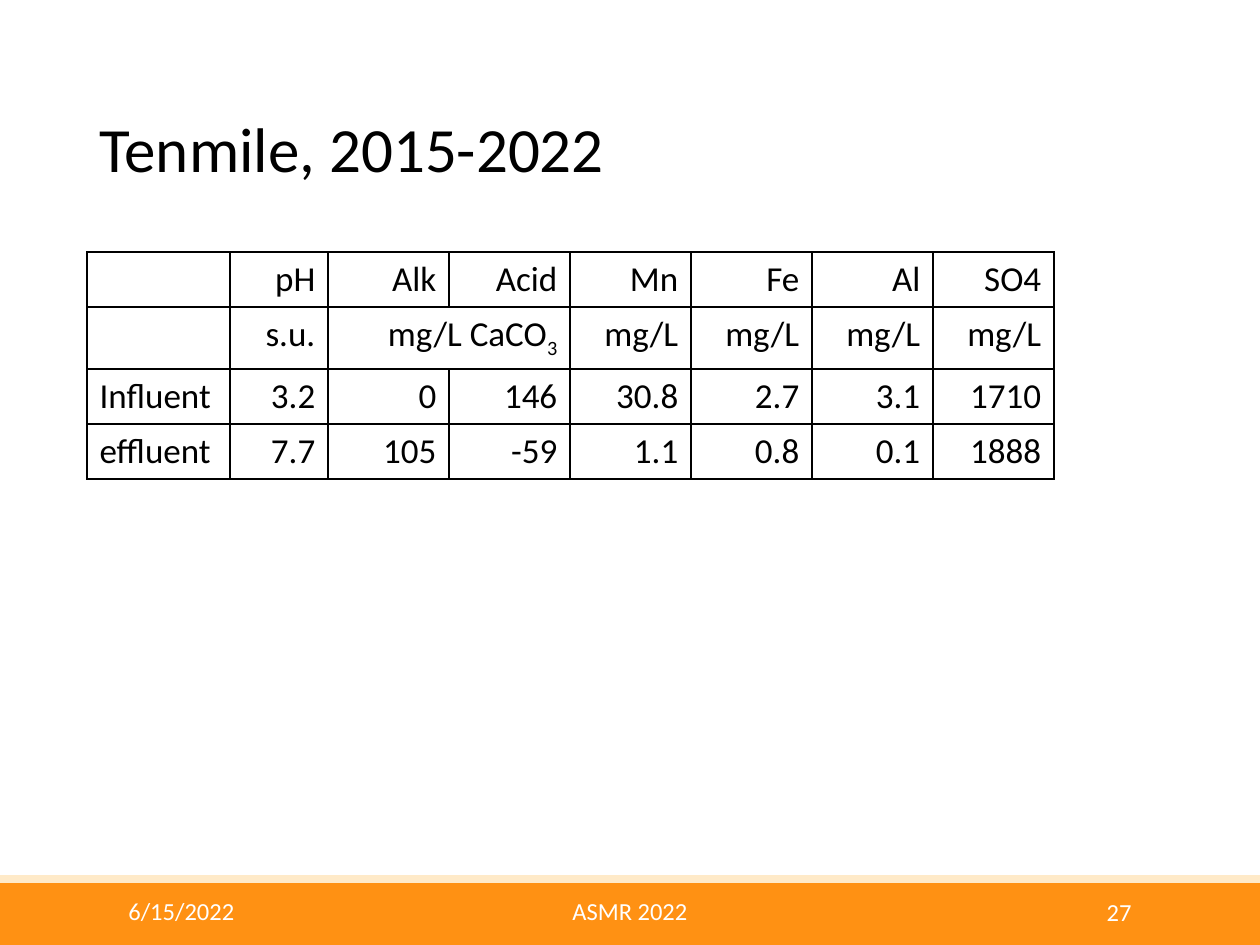
"""Build the Tenmile water quality table slide."""
import pptx
import pptx.util
import pptx.dml.color
import pptx.enum.shapes
import pptx.enum.text
import pptx.oxml
import pptx.oxml.ns

RGB = pptx.dml.color.RGBColor.from_string
ALIGN = pptx.enum.text.PP_ALIGN
ANCHOR = pptx.enum.text.MSO_ANCHOR
THEME = {
    "font": "Calibri", "ink": "000000", "paper": "FFFFFF",
    "band": "FF9113", "strip": "FFEAC8",
    "title": 36, "cell": 20, "foot": 14,
}
SCALE = 914400 / 126


def px(*sizes):
    return [pptx.util.Emu(round(size * SCALE)) for size in sizes]


def style(para, size, color, align):
    para.alignment = align
    form = {"name": THEME["font"], "size": pptx.util.Pt(THEME[size]), "bold": False}
    for run in para.runs:
        for key, value in form.items():
            setattr(run.font, key, value)
        run.font.color.rgb = RGB(THEME[color])


deck = pptx.Presentation()
deck.slide_width, deck.slide_height = px(1260, 945)
slide = deck.slides.add_slide(deck.slide_layouts[5])

for name, top, high in [("band", 883, 62), ("strip", 875, 8)]:
    bar = slide.shapes.add_shape(
        pptx.enum.shapes.MSO_SHAPE.RECTANGLE, *px(0, top, 1260, high))
    bar.shadow.inherit = False
    bar.fill.solid()
    bar.fill.fore_color.rgb = RGB(THEME[name])
    bar.line.fill.background()

feet = [
    ("6/15/2022", 116, 890, 189, ALIGN.LEFT),
    ("ASMR 2022", 441, 890, 378, ALIGN.CENTER),
    ("27", 955, 891, 189, ALIGN.RIGHT),
]
for text, left, top, wide, align in feet:
    frame = slide.shapes.add_textbox(*px(left, top, wide, 50)).text_frame
    frame.word_wrap = True
    frame.text = text
    style(frame.paragraphs[0], "foot", "paper", align)

title = slide.shapes.title
title.left, title.top, title.width, title.height = px(87, 87, 1086, 131)
frame = title.text_frame
frame.text = "Tenmile, 2015-2022"
frame.vertical_anchor = ANCHOR.MIDDLE
frame.paragraphs[0].line_spacing = 0.9
style(frame.paragraphs[0], "title", "ink", ALIGN.LEFT)

rows = [
    ["", "pH", "Alk", "Acid", "Mn", "Fe", "Al", "SO4"],
    ["", "s.u.", "mg/L CaCO", "", "mg/L", "mg/L", "mg/L", "mg/L"],
    ["Influent", "3.2", "0", "146", "30.8", "2.7", "3.1", "1710"],
    ["effluent", "7.7", "105", "-59", "1.1", "0.8", "0.1", "1888"],
]
wides = [143, 98] + [121] * 6
highs = [55, 62, 55, 55]
grid = slide.shapes.add_table(
    len(rows), len(wides), *px(87, 252, sum(wides), sum(highs))).table
for flag in ("first_row", "horz_banding"):
    setattr(grid, flag, False)
for col, wide in zip(grid.columns, px(*wides)):
    col.width = wide
for row, high in zip(grid.rows, px(*highs)):
    row.height = high
grid.cell(1, 2).merge(grid.cell(1, 3))

for r, row in enumerate(rows):
    for c, text in enumerate(row):
        cell = grid.cell(r, c)
        props = cell._tc.get_or_add_tcPr()
        for side in "LRTB":
            props.append(pptx.oxml.parse_xml(
                f'<a:ln{side} {pptx.oxml.ns.nsdecls("a")} w="12700"><a:solidFill>'
                f'<a:srgbClr val="{THEME["ink"]}"/></a:solidFill></a:ln{side}>'))
        cell.fill.background()
        if not text:
            continue
        para = cell.text_frame.paragraphs[0]
        para.add_run().text = text
        if text.endswith("CaCO"):
            sub = para.add_run()
            sub.text = "3"
            sub._r.get_or_add_rPr().set("baseline", "-25000")
        style(para, "cell", "ink", ALIGN.RIGHT if c else ALIGN.LEFT)

deck.save("out.pptx")
